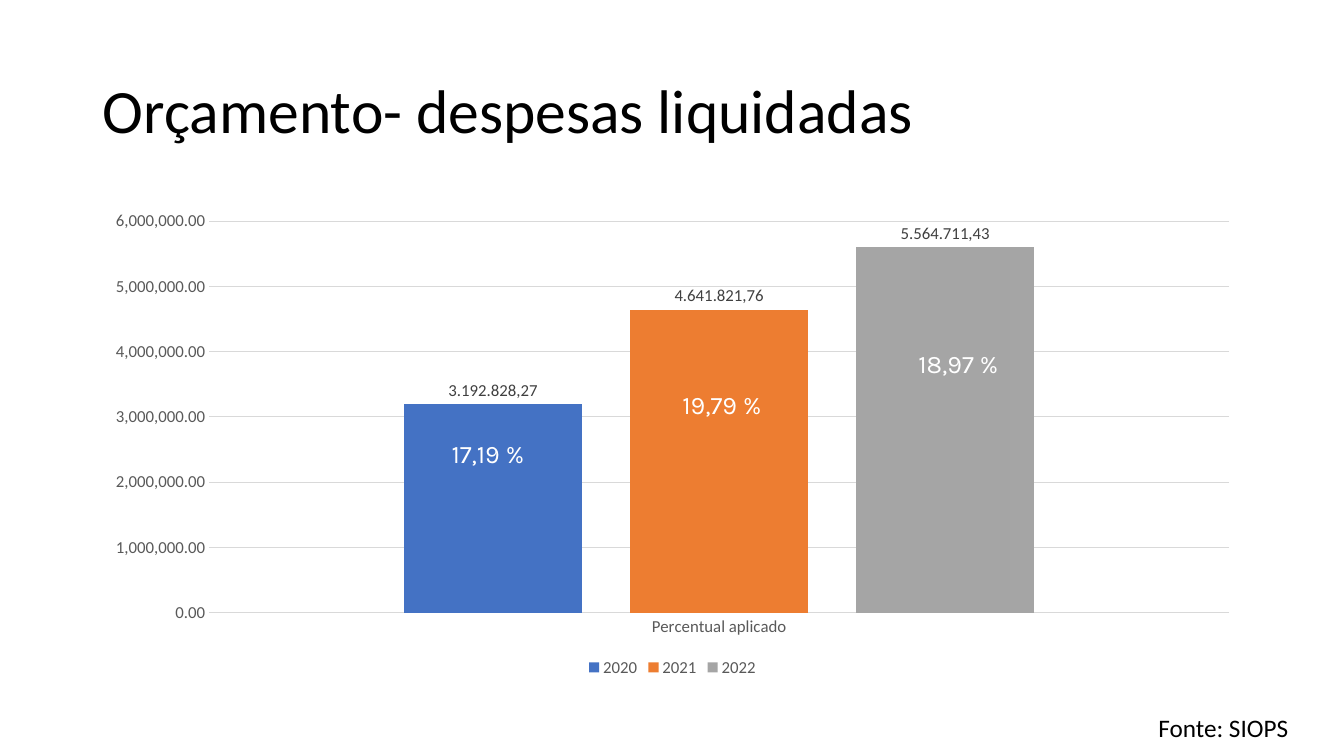
import pptx
import pptx.chart.data
import pptx.dml.color
import pptx.enum.chart
import pptx.enum.text
import pptx.util

Inches = pptx.util.Inches

COLORS = {
    "black": "000000", "white": "FFFFFF", "axis": "595959", "label": "404040",
    "grid": "D9D9D9", "blue": "4472C4", "orange": "ED7D31", "gray": "A5A5A5",
}

# year, amount, color, label, percentage, left and top of the percentage, wrap
EXPENSES = [
    ("2020", 3192598.44, "blue", "3.192.828,27", "17,19 %", 4.38, 4.3, True),
    ("2021", 4641221.76, "orange", "4.641.821,76", "19,79 %", 6.67, 3.81, False),
    ("2022", 5598605.93, "gray", "5.564.711,43", "18,97 %", 9.01, 3.41, False),
]


def rgb(name):
    return pptx.dml.color.RGBColor.from_string(COLORS[name])


def set_attrs(obj, values):
    for name, value in values.items():
        setattr(obj, name, value)


class SlideBuilder:
    def __init__(self, prs, font="Calibri"):
        self.font = font
        self.s = prs.slides.add_slide(prs.slide_layouts[5])

    def style(self, font, size, color, name=None):
        set_attrs(font, {"name": name or self.font, "size": pptx.util.Pt(size),
                         "bold": False})
        font.color.rgb = rgb(color)

    def line(self, line, color):
        line.color.rgb = rgb(color)
        line.width = pptx.util.Pt(0.75)

    def title(self, text, left, top, width, height):
        sp = self.s.shapes.title
        set_attrs(sp, {"left": Inches(left), "top": Inches(top),
                       "width": Inches(width), "height": Inches(height)})
        tf = sp.text_frame
        set_attrs(tf, {"text": text, "word_wrap": True,
                       "vertical_anchor": pptx.enum.text.MSO_ANCHOR.MIDDLE})
        p = tf.paragraphs[0]
        set_attrs(p, {"alignment": pptx.enum.text.PP_ALIGN.LEFT, "line_spacing": 0.9})
        self.style(p.runs[0].font, 44, "black")

    def text(self, text, left, top, width, color, font=None, wrap=True):
        sp = self.s.shapes.add_textbox(Inches(left), Inches(top), Inches(width), Inches(0.4))
        tf = sp.text_frame
        set_attrs(tf, {"text": text, "word_wrap": wrap,
                       "auto_size": pptx.enum.text.MSO_AUTO_SIZE.SHAPE_TO_FIT_TEXT})
        self.style(tf.paragraphs[0].runs[0].font, 18, color, font)

    def column_chart(self, category, rows, left, top, width, height):
        data = pptx.chart.data.CategoryChartData(number_format="#,##0.00")
        data.categories = [category]
        for year, amount, *_ in rows:
            data.add_series(year, [amount])
        chart = self.s.shapes.add_chart(
            pptx.enum.chart.XL_CHART_TYPE.COLUMN_CLUSTERED,
            Inches(left), Inches(top), Inches(width), Inches(height), data).chart
        set_attrs(chart, {"has_title": False, "has_legend": True})
        self.style(chart.font, 10, "black")
        set_attrs(chart.legend, {
            "position": pptx.enum.chart.XL_LEGEND_POSITION.BOTTOM,
            "include_in_layout": False})
        self.style(chart.legend.font, 12, "axis")
        self.format_axes(chart)
        plot = chart.plots[0]
        set_attrs(plot, {"gap_width": 219, "overlap": -27, "vary_by_categories": False})
        for series, (_, _, color, label, *_) in zip(plot.series, rows):
            self.format_series(series, color, label)

    def format_axes(self, chart):
        none = pptx.enum.chart.XL_TICK_MARK.NONE
        for axis in (chart.category_axis, chart.value_axis):
            set_attrs(axis, {"major_tick_mark": none, "minor_tick_mark": none})
            self.style(axis.tick_labels.font, 12, "axis")
        self.line(chart.category_axis.format.line, "grid")
        axis = chart.value_axis
        set_attrs(axis, {"minimum_scale": 0, "maximum_scale": 6000000,
                         "major_unit": 1000000, "has_major_gridlines": True})
        axis.format.line.fill.background()
        self.line(axis.major_gridlines.format.line, "grid")
        set_attrs(axis.tick_labels, {"number_format": "#,##0.00",
                                     "number_format_is_linked": False})

    def format_series(self, series, color, label):
        series.invert_if_negative = False
        series.format.fill.solid()
        series.format.fill.fore_color.rgb = rgb(color)
        outside = pptx.enum.chart.XL_LABEL_POSITION.OUTSIDE_END
        set_attrs(series.data_labels, {
            "show_value": True, "number_format": "#,##0.00",
            "number_format_is_linked": False, "position": outside})
        self.style(series.data_labels.font, 12, "label")
        point_label = series.points[0].data_label
        point_label.text_frame.text = label
        point_label.position = outside
        self.style(point_label.text_frame.paragraphs[0].runs[0].font, 12, "label")


def main():
    prs = pptx.Presentation()
    set_attrs(prs, {"slide_width": Inches(13.33), "slide_height": Inches(7.5)})
    slide = SlideBuilder(prs)
    slide.title("Orçamento- despesas liquidadas", 0.92, 0.4, 11.5, 1.45)
    slide.column_chart("Percentual aplicado", EXPENSES, 0.92, 2, 11.5, 4.76)
    for *_, percentage, left, top, wrap in EXPENSES:
        slide.text(percentage, left, top, 1.05, "white", "Karla", wrap)
    slide.text("Fonte: SIOPS", 11.39, 7.02, 2.98, "black")
    prs.save("out.pptx")


if __name__ == "__main__":
    main()
